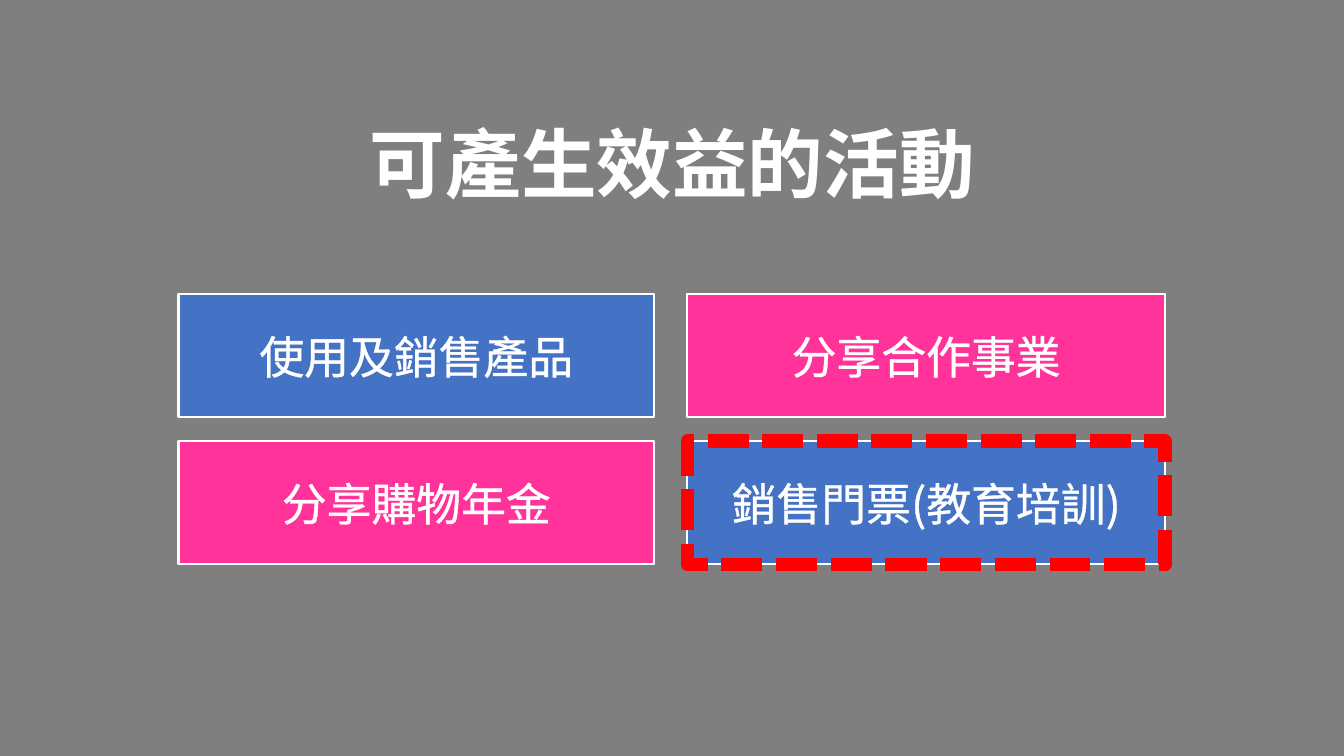
import pptx
import pptx.dml.color
import pptx.enum.dml
import pptx.enum.shapes
import pptx.enum.text
import pptx.oxml
import pptx.oxml.ns
import pptx.util

WHITE = pptx.dml.color.RGBColor(0xFF, 0xFF, 0xFF)
GREY = pptx.dml.color.RGBColor(0x7F, 0x7F, 0x7F)
BLUE = pptx.dml.color.RGBColor(0x44, 0x72, 0xC4)
PINK = pptx.dml.color.RGBColor(0xFF, 0x33, 0x99)
RED = pptx.dml.color.RGBColor(0xFF, 0x00, 0x00)
FONT = "Noto Sans CJK SC"

COLUMNS = [(127.5, 340), (491, 341.25)]
ROWS = [210.25, 315.25]
ROW_HEIGHT = 88
ACTIVITIES = [
    [("使用及銷售產品", BLUE), ("分享合作事業", PINK)],
    [("分享購物年金", PINK), ("銷售門票(教育培訓)", BLUE)],
]


def format_text(frame, size, bold=False):
    para = frame.paragraphs[0]
    para.alignment = pptx.enum.text.PP_ALIGN.CENTER
    span = para.runs[0]
    span.font.size = pptx.util.Pt(size)
    span.font.bold = bold
    span.font.color.rgb = WHITE
    span.font.name = FONT
    east_asian = pptx.oxml.parse_xml(
        f'<a:ea {pptx.oxml.ns.nsdecls("a")} typeface="{FONT}"/>')
    properties = span.font._element
    properties.find(pptx.oxml.ns.qn("a:latin")).addnext(east_asian)
    return properties


def add_text_outline(properties, width):
    outline = pptx.oxml.parse_xml(
        f'<a:ln {pptx.oxml.ns.nsdecls("a")} w="{pptx.util.Pt(width)}">'
        f'<a:solidFill><a:srgbClr val="{WHITE}"/></a:solidFill></a:ln>')
    properties.insert(0, outline)


def set_title(page, text):
    title = page.shapes.title
    title.left, title.top = pptx.util.Pt(255), pptx.util.Pt(86.5)
    title.width, title.height = pptx.util.Pt(450.5), pptx.util.Pt(66.5)
    frame = title.text_frame
    frame.text = text
    frame.word_wrap = False
    frame.auto_size = pptx.enum.text.MSO_AUTO_SIZE.SHAPE_TO_FIT_TEXT
    frame.vertical_anchor = pptx.enum.text.MSO_ANCHOR.MIDDLE
    frame.paragraphs[0].line_spacing = 0.9
    format_text(frame, 54, bold=True)


def add_box(page, column, row, line_color, line_width):
    left, width = COLUMNS[column]
    box = page.shapes.add_shape(
        pptx.enum.shapes.MSO_SHAPE.RECTANGLE,
        pptx.util.Pt(left), pptx.util.Pt(ROWS[row]),
        pptx.util.Pt(width), pptx.util.Pt(ROW_HEIGHT))
    box.shadow.inherit = False
    box.line.color.rgb = line_color
    box.line.width = pptx.util.Pt(line_width)
    return box


def add_activity(page, column, row, text, color):
    box = add_box(page, column, row, WHITE, 1.5)
    box.fill.solid()
    box.fill.fore_color.rgb = color
    frame = box.text_frame
    frame.text = text
    frame.word_wrap = True
    frame.vertical_anchor = pptx.enum.text.MSO_ANCHOR.MIDDLE
    add_text_outline(format_text(frame, 32), 0.75)


def add_highlight(page, column, row):
    box = add_box(page, column, row, RED, 9.75)
    box.fill.background()
    box.line.dash_style = pptx.enum.dml.MSO_LINE.DASH
    dash = box.line._ln.find(pptx.oxml.ns.qn("a:prstDash"))
    dash.set("val", "sysDash")


def main():
    deck = pptx.Presentation()
    deck.slide_width, deck.slide_height = pptx.util.Pt(960), pptx.util.Pt(540)
    page = deck.slides.add_slide(deck.slide_layouts[5])
    page.background.fill.solid()
    page.background.fill.fore_color.rgb = GREY
    set_title(page, "可產生效益的活動")
    for row, activities in enumerate(ACTIVITIES):
        for column, (text, color) in enumerate(activities):
            add_activity(page, column, row, text, color)
    add_highlight(page, column=1, row=1)
    deck.save("out.pptx")


if __name__ == "__main__":
    main()
